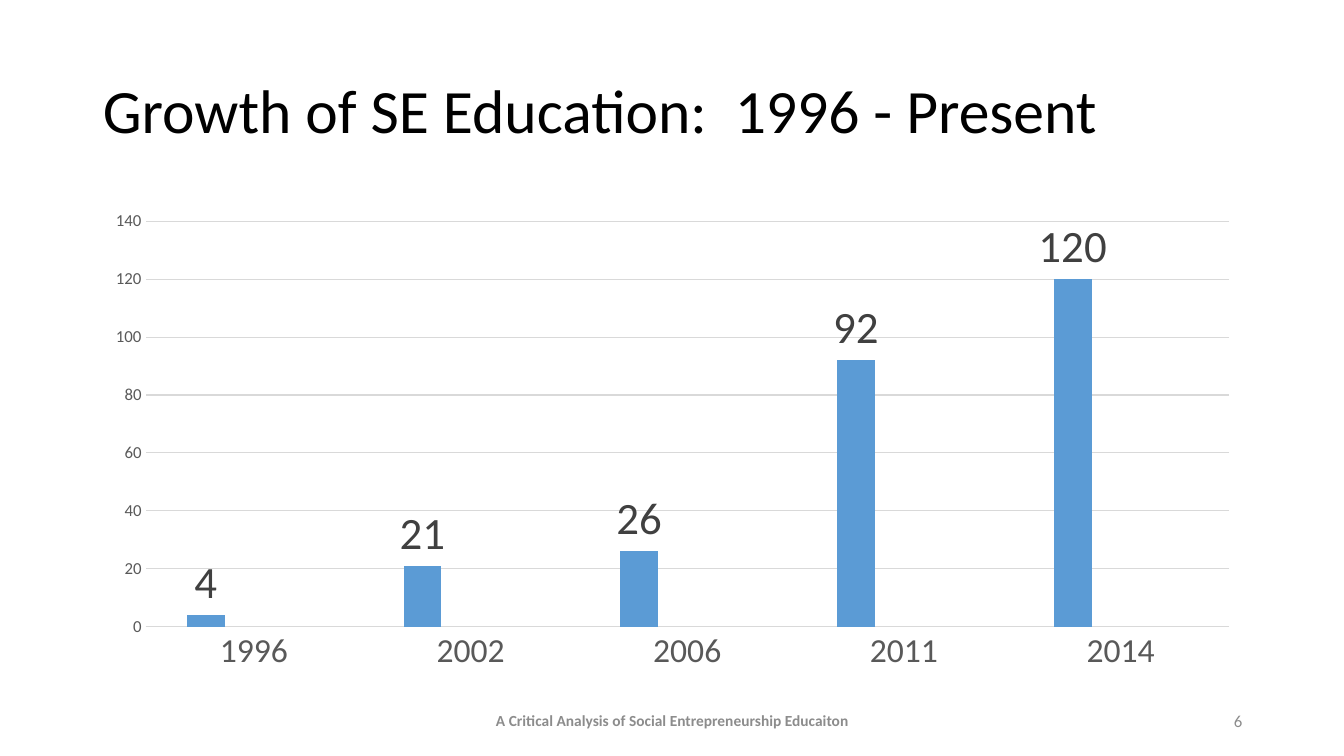
from pptx import Presentation
from pptx.chart.data import CategoryChartData
from pptx.dml.color import RGBColor
from pptx.enum.chart import XL_CHART_TYPE as CHART, XL_LABEL_POSITION as LABEL, XL_TICK_MARK as TICK
from pptx.enum.text import MSO_ANCHOR as ANCHOR, MSO_AUTO_SIZE as AUTO, PP_ALIGN as ALIGN
from pptx.util import Inches, Pt

FONT = "Calibri"
COLORS = {
    "title": "000000", "footer": "8C8C8C", "axis": "595959", "label": "404040",
    "grid": "D9D9D9", "Series 1": "5B9BD5", "Series 2": "ED7D31", "Series 3": "A5A5A5",
}
COURSES = {"1996": 4, "2002": 21, "2006": 26, "2011": 92, "2014": 120}


def rgb(name):
    return RGBColor.from_string(COLORS[name])


def format_font(font, size, color, bold=False):
    font.name, font.size, font.bold = FONT, Pt(size), bold
    font.color.rgb = rgb(color)


def write_text(sp, text, size, color, align=ALIGN.LEFT, bold=False, spacing=1.0):
    tf = sp.text_frame
    tf.word_wrap, tf.auto_size = True, AUTO.NONE
    tf.vertical_anchor = ANCHOR.MIDDLE
    p = tf.paragraphs[0]
    p.alignment, p.line_spacing = align, spacing
    r = p.add_run()
    r.text = text
    format_font(r.font, size, color, bold)


def add_title(slide, x, y, w, h):
    sp = slide.shapes.title
    sp.left, sp.top, sp.width, sp.height = map(Inches, (x, y, w, h))
    write_text(sp, "Growth of SE Education:  1996 - Present", 44, "title", spacing=0.9)


def format_line(line, color="grid"):
    line.color.rgb = rgb(color)
    line.width = Pt(0.75)


def add_growth_chart(slide, x, y, w, h):
    data = CategoryChartData()
    data.categories = list(COURSES)
    data.add_series("Series 1", list(COURSES.values()))
    for name in ("Series 2", "Series 3"):
        data.add_series(name, [None] * len(COURSES))
    chart = slide.shapes.add_chart(
        CHART.COLUMN_CLUSTERED, *map(Inches, (x, y, w, h)), data).chart
    chart.has_title = chart.has_legend = False
    format_font(chart.font, 10, "title")

    plot = chart.plots[0]
    plot.gap_width, plot.overlap, plot.vary_by_categories = 219, -27, False
    for series in plot.series:
        series.format.fill.solid()
        series.format.fill.fore_color.rgb = rgb(series.name)
    labels = plot.series[0].data_labels
    labels.show_value, labels.position = True, LABEL.OUTSIDE_END
    format_font(labels.font, 32, "label")

    years, counts = chart.category_axis, chart.value_axis
    for axis, size in ((years, 24), (counts, 12)):
        axis.major_tick_mark = axis.minor_tick_mark = TICK.NONE
        format_font(axis.tick_labels.font, size, "axis")
    format_line(years.format.line)
    counts.format.line.fill.background()
    counts.minimum_scale, counts.maximum_scale, counts.major_unit = 0, 140, 20
    counts.has_major_gridlines = True
    format_line(counts.major_gridlines.format.line)


def add_footer(slide, x, y, w, h):
    """Centre the talk's name in the box and put the page number at its right end."""
    name_w, number_w = 4.5, 3
    name = slide.shapes.add_textbox(
        *map(Inches, (x + (w - name_w) / 2, y, name_w, h)))
    write_text(name, "A Critical Analysis of Social Entrepreneurship Educaiton", 11,
               "footer", align=ALIGN.CENTER, bold=True)
    number = slide.shapes.add_textbox(
        *map(Inches, (x + w - number_w, y, number_w, h)))
    write_text(number, "6", 12, "footer", align=ALIGN.RIGHT)


def main():
    prs = Presentation()
    prs.slide_width, prs.slide_height = Inches(13.33), Inches(7.5)
    slide = prs.slides.add_slide(prs.slide_layouts[5])
    left, width = 0.92, 11.5
    add_title(slide, left, 0.4, width, 1.45)
    add_growth_chart(slide, left, 2, width, 4.76)
    add_footer(slide, left, 6.95, width, 0.4)
    prs.save("out.pptx")


if __name__ == "__main__":
    main()
